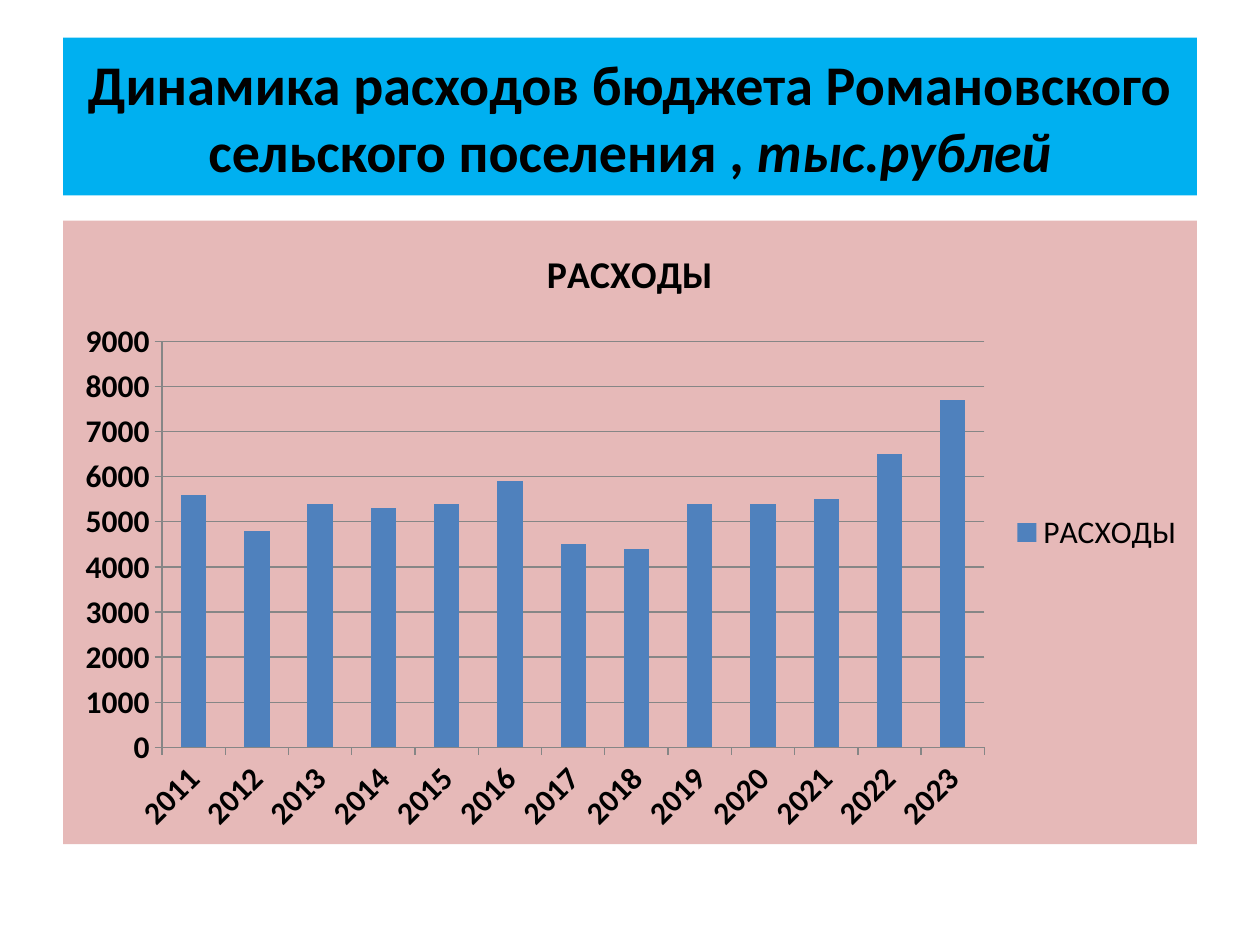
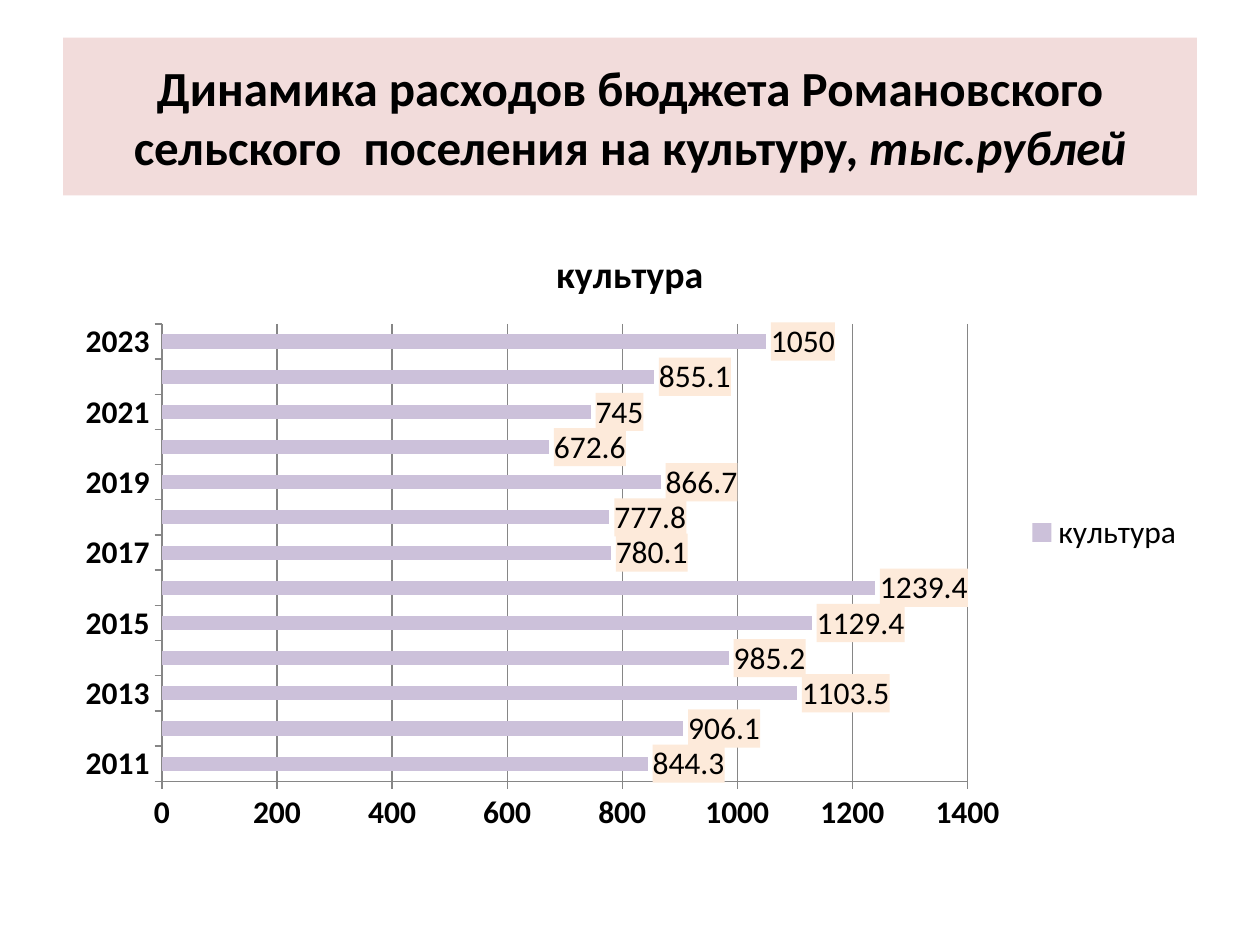
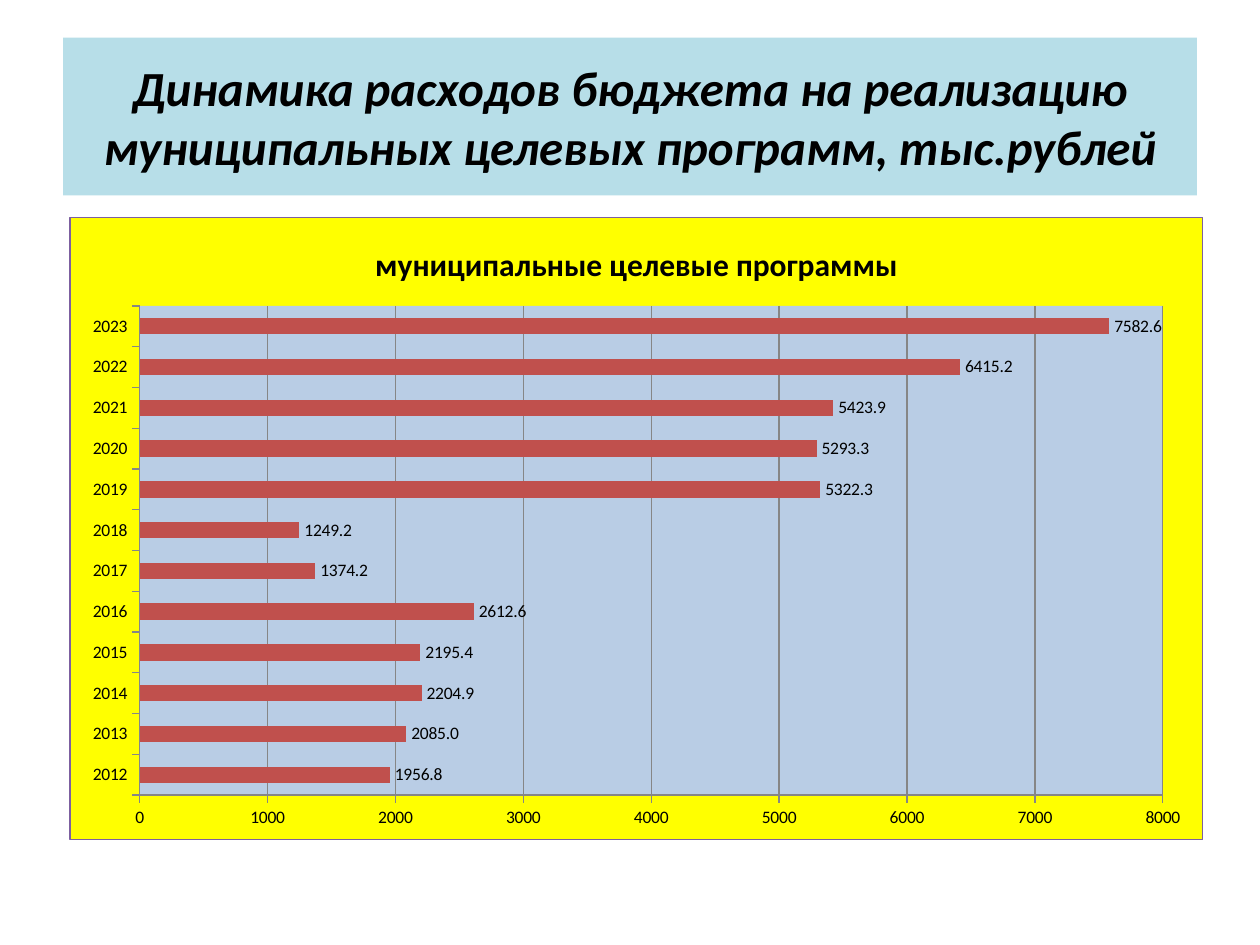
from lxml import etree
from pptx import Presentation
from pptx.chart.data import CategoryChartData
from pptx.dml.color import RGBColor
from pptx.enum.chart import XL_CHART_TYPE, XL_LABEL_POSITION, XL_LEGEND_POSITION, XL_TICK_MARK
from pptx.enum.text import MSO_ANCHOR, PP_ALIGN
from pptx.util import Cm, Pt

COLUMNS = XL_CHART_TYPE.COLUMN_CLUSTERED
BARS = XL_CHART_TYPE.BAR_CLUSTERED
OUTSIDE_END = XL_LABEL_POSITION.OUTSIDE_END
LEGEND_RIGHT = XL_LEGEND_POSITION.RIGHT
TICK_OUT = XL_TICK_MARK.OUTSIDE
TICK_NONE = XL_TICK_MARK.NONE
MIDDLE = MSO_ANCHOR.MIDDLE
CENTER = PP_ALIGN.CENTER

FONT = "Calibri"
TITLE_ONLY = 5
C = {
    "text": "000000", "grid": "868686",
    "sky": "00B0F0", "pale_rose": "F2DCDB", "pale_aqua": "B7DEE8",
    "rose": "E6B9B8", "yellow": "FFFF00", "pale_blue": "B9CDE5",
    "blue": "4F81BD", "lilac": "CCC1DA", "red": "C0504D",
    "peach": "FDEADA", "violet": "7D60A0",
}
TITLE_BOX = (1.27, 0.76, 22.86, 3.18)
CHART_BOX = (1.27, 4.45, 22.86, 12.57)
PROGRAMS_BOX = (1.4, 4.37, 22.86, 12.57)
UNIT = "тыс.рублей"
YEARS = range(2011, 2024)
NS = ('xmlns:c="http://schemas.openxmlformats.org/drawingml/2006/chart" '
      'xmlns:a="http://schemas.openxmlformats.org/drawingml/2006/main"')


def rgb(key):
    return RGBColor.from_string(C[key])


def format_font(font, size, bold=False, italic=False, color="text"):
    font.name = FONT
    font.size = Pt(size)
    font.bold = bold
    font.italic = italic
    font.color.rgb = rgb(color)


def add_text(paragraph, text, **style):
    run = paragraph.add_run()
    run.text = text
    format_font(run.font, **style)


def area_format(fill=None, border=None):
    """Return a c:spPr element for chart parts without a public format."""
    def paint(key):
        return f'<a:solidFill><a:srgbClr val="{C[key]}"/></a:solidFill>' if key else "<a:noFill/>"
    return etree.fromstring(
        f'<c:spPr {NS}>{paint(fill)}<a:ln w="9525">{paint(border)}</a:ln></c:spPr>')


def place_title(slide, box, fill, size, parts):
    """Fill the title band; parts are (text, italic) pairs."""
    title = slide.shapes.title
    title.left, title.top, title.width, title.height = map(Cm, box)
    title.fill.solid()
    title.fill.fore_color.rgb = rgb(fill)
    frame = title.text_frame
    frame.word_wrap = True
    frame.vertical_anchor = MIDDLE
    paragraph = frame.paragraphs[0]
    paragraph.alignment = CENTER
    for text, italic in parts:
        add_text(paragraph, text, size=size, bold=True, italic=italic)


def style_axis(axis, size, bold):
    axis.major_tick_mark = TICK_OUT
    axis.minor_tick_mark = TICK_NONE
    axis.format.line.color.rgb = rgb("grid")
    axis.format.line.width = Pt(0.75)
    format_font(axis.tick_labels.font, size, bold)


def label_bars(plot, size, number_format, fill):
    plot.has_data_labels = True
    labels = plot.data_labels
    labels.show_value = True
    labels.number_format = number_format
    labels.number_format_is_linked = False
    labels.position = OUTSIDE_END
    format_font(labels.font, size)
    if fill:
        labels._element.find("{*}txPr").addprevious(area_format(fill))


def place_chart(slide, box, kind, name, years, values, color, size=18, title_size=21.6,
                bold_axes=True, legend=True, label_format=None, label_fill=None,
                tilt=None, fill=None, border=None, plot_fill=None):
    data = CategoryChartData()
    data.categories = [str(year) for year in years]
    data.add_series(name, values)
    chart = slide.shapes.add_chart(kind, *map(Cm, box), data).chart
    format_font(chart.font, size)

    chart.has_title = True
    add_text(chart.chart_title.text_frame.paragraphs[0], name, size=title_size, bold=True)
    chart.chart_title.include_in_layout = False
    chart.has_legend = legend
    if legend:
        chart.legend.position = LEGEND_RIGHT
        chart.legend.include_in_layout = False
        format_font(chart.legend.font, size)

    for axis in (chart.category_axis, chart.value_axis):
        style_axis(axis, size, bold_axes)
    grid = chart.value_axis.major_gridlines.format.line
    grid.color.rgb = rgb("grid")
    grid.width = Pt(0.75)
    if tilt:
        body = chart.category_axis._element.find("{*}txPr/{*}bodyPr")
        body.set("rot", str(tilt * 60000))

    plot = chart.plots[0]
    plot.gap_width = 150
    plot.vary_by_categories = False
    bars = plot.series[0].format.fill
    bars.solid()
    bars.fore_color.rgb = rgb(color)
    if label_format:
        label_bars(plot, size, label_format, label_fill)

    chart_element = chart._chartSpace.find("{*}chart")
    chart_element.addnext(area_format(fill, border))
    chart_element.find("{*}plotArea").append(area_format(plot_fill))


def total_spending(slide):
    place_title(slide, TITLE_BOX, "sky", 32, [
        ("Динамика расходов бюджета Романовского сельского поселения , ", False), (UNIT, True)])
    place_chart(slide, CHART_BOX, COLUMNS, "РАСХОДЫ", YEARS,
                [5600, 4800, 5400, 5300, 5400, 5900, 4500, 4400, 5400, 5400, 5500, 6500, 7700],
                "blue", tilt=-45, fill="rose")


def culture_spending(slide):
    place_title(slide, TITLE_BOX, "pale_rose", 28, [
        ("Динамика расходов бюджета Романовского сельского  поселения на культуру, ", False),
        (UNIT, True)])
    place_chart(slide, CHART_BOX, BARS, "культура", YEARS,
                [844.3, 906.1, 1103.5, 985.2, 1129.4, 1239.4, 780.1,
                 777.8, 866.7, 672.6, 745, 855.1, 1050],
                "lilac", label_format="General", label_fill="peach")


def program_spending(slide):
    place_title(slide, TITLE_BOX, "pale_aqua", 28, [
        (f"Динамика расходов бюджета на реализацию муниципальных целевых программ, {UNIT}", True)])
    place_chart(slide, PROGRAMS_BOX, BARS, "муниципальные целевые программы", YEARS[1:],
                [1956.8, 2085, 2204.9, 2195.4, 2612.6, 1374.2,
                 1249.2, 5322.3, 5293.3, 5423.9, 6415.2, 7582.6],
                "red", size=10, title_size=18, bold_axes=False, legend=False,
                label_format="0.0", fill="yellow", border="violet", plot_fill="pale_blue")


def main():
    deck = Presentation()
    deck.slide_width, deck.slide_height = Cm(25.4), Cm(19.05)
    for build in (total_spending, culture_spending, program_spending):
        build(deck.slides.add_slide(deck.slide_layouts[TITLE_ONLY]))
    deck.save("out.pptx")


if __name__ == "__main__":
    main()
